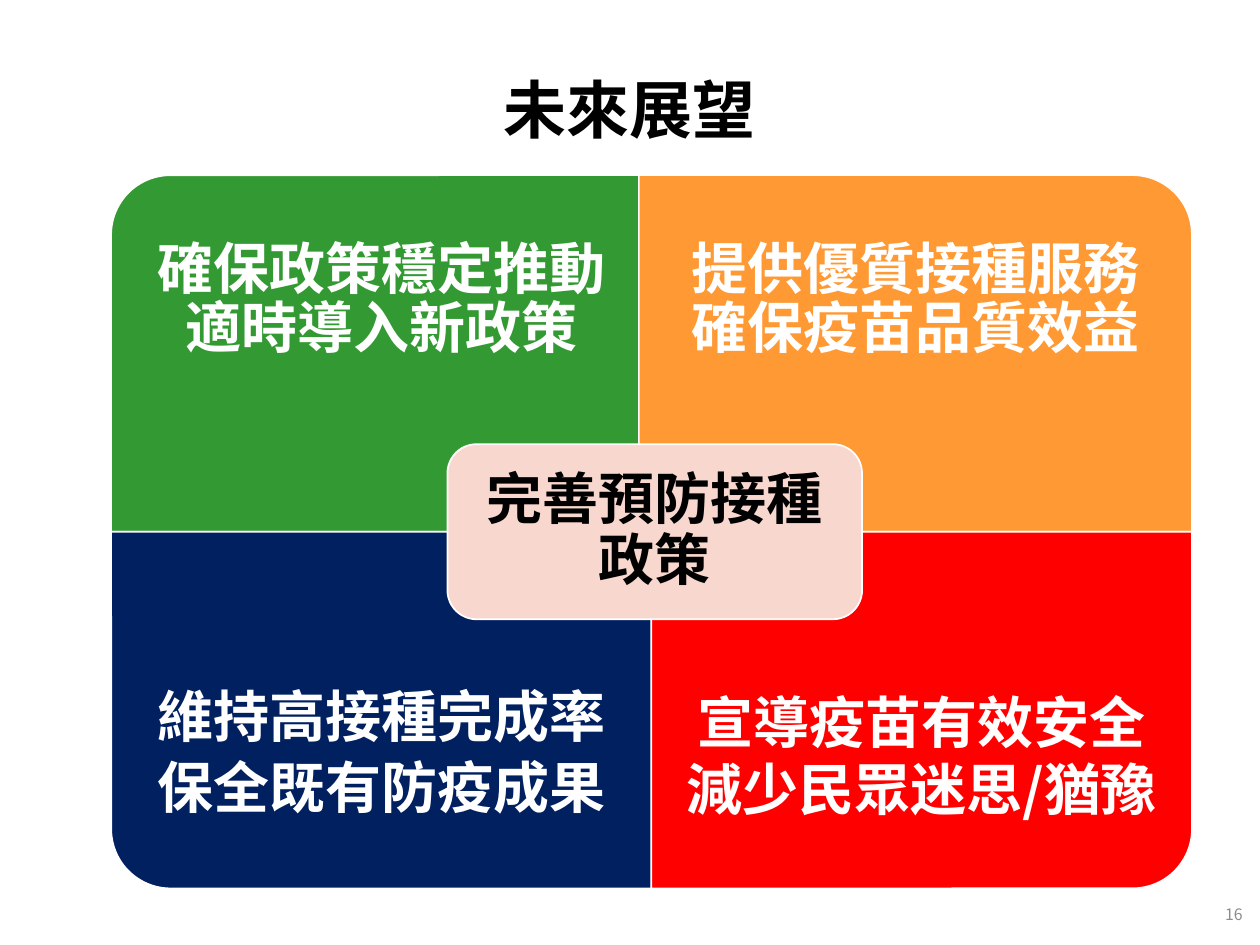
import pptx
import pptx.util
import pptx.dml.color
import pptx.enum.shapes
import pptx.enum.text
import pptx.oxml
import pptx.oxml.ns

Cm, Pt = pptx.util.Cm, pptx.util.Pt
SHAPE = pptx.enum.shapes.MSO_SHAPE
ALIGN = pptx.enum.text.PP_ALIGN

COLORS = {
    "black": "000000", "white": "FFFFFF", "gray": "8C8C8C", "green": "339933",
    "orange": "FF9933", "navy": "002060", "red": "FF0000", "pink": "F8D7CE",
}
FONT, NUMBER_FONT = "Noto Sans CJK SC", "Noto Sans CJK TC"

# Content
TITLE = "未來展望"
PAGE_NUMBER = "16"
CORE_GOAL = "完善預防接種政策"
# Lines, color, column, row, rotation, line spacing, space after (pt)
QUADRANTS = [
    (["確保政策穩定推動", "適時導入新政策"], "green", 0, 0, 270, 0.5, 14),
    (["提供優質接種服務", "確保疫苗品質效益"], "orange", 1, 0, 0, 0.5, 14),
    (["維持高接種完成率", "保全既有防疫成果"], "navy", 0, 1, 180, 0.9, 6),
    (["宣導疫苗有效安全減少民眾迷思/猶豫"], "red", 1, 1, 90, 1, 6),
]

# Matrix geometry in cm
LEFT, TOP, RIGHT = 2.24, 3.53, 24.03
QUAD_W, QUAD_H = 10.9, 7.19
WIDE_W = 11.15  # the orange quadrant reaches over the green one
LABEL_H = QUAD_H * 0.75
CORE_W, CORE_H, CORE_PAD = 8.36, 3.53, 0.17


def rgb(name):
    return pptx.dml.color.RGBColor.from_string(COLORS[name])


def add_text(slide, box, lines, size, color, bold=True, font=FONT,
             align=ALIGN.CENTER, spacing=0.9, after=0, inset=None):
    frame = slide.shapes.add_textbox(*map(Cm, box)).text_frame
    frame.word_wrap = True
    frame.vertical_anchor = pptx.enum.text.MSO_ANCHOR.MIDDLE
    if inset is not None:
        frame.margin_left = frame.margin_right = Cm(inset)
        frame.margin_top = frame.margin_bottom = Cm(inset)
    frame.text = "\n".join(lines)
    for paragraph in frame.paragraphs:
        paragraph.alignment = align
        paragraph.line_spacing = spacing
        paragraph.space_after = Pt(after)
        for run in paragraph.runs:
            run.font.size, run.font.bold, run.font.name = Pt(size), bold, font
            run.font.color.rgb = rgb(color)
            # East Asian typeface
            east_asian = pptx.oxml.parse_xml(
                f'<a:ea {pptx.oxml.ns.nsdecls("a")} typeface="{font}"/>')
            run.font._element.find(pptx.oxml.ns.qn("a:latin")).addnext(east_asian)


def add_panel(slide, preset, box, color, rotation=0):
    left, top, width, height = box
    if rotation % 180:  # a quarter turn swaps the sides about the centre
        left, top = left + (width - height) / 2, top + (height - width) / 2
        width, height = height, width
    panel = slide.shapes.add_shape(preset, *map(Cm, (left, top, width, height)))
    panel.rotation = rotation
    panel.shadow.inherit = False
    panel.fill.solid()
    panel.fill.fore_color.rgb = rgb(color)
    panel.line.color.rgb = rgb("white")
    panel.line.width = Pt(1)


def main():
    deck = pptx.Presentation()
    deck.slide_width, deck.slide_height = Cm(25.4), Cm(19.05)
    slide = deck.slides.add_slide(deck.slide_layouts[6])

    # Title and page number
    add_text(slide, (1.75, 1.02, 21.9, 2.51), [TITLE], 36, "black")
    add_text(slide, (19.58, 17.93, 5.72, 1.02), [PAGE_NUMBER], 9, "gray",
             bold=False, font=NUMBER_FONT, align=ALIGN.RIGHT, spacing=1)

    # Four quadrants, labels towards the outer edge
    for lines, color, column, row, rotation, spacing, after in QUADRANTS:
        width = WIDE_W if color == "orange" else QUAD_W
        left = RIGHT - width if column else LEFT
        top = TOP + row * QUAD_H
        add_panel(slide, SHAPE.ROUND_1_RECTANGLE, (left, top, width, QUAD_H),
                  color, rotation)
        label_top = top + row * (QUAD_H - LABEL_H)
        add_text(slide, (left, label_top, width, LABEL_H), lines, 32, "white",
                 spacing=spacing, after=after, inset=0.63)

    # Core goal in the middle
    core_left, core_top = 9.02, TOP + QUAD_H - CORE_H / 2
    add_panel(slide, SHAPE.ROUNDED_RECTANGLE,
              (core_left, core_top, CORE_W, CORE_H), "pink")
    add_text(slide, (core_left + CORE_PAD, core_top + CORE_PAD,
                     CORE_W - 2 * CORE_PAD, CORE_H - 2 * CORE_PAD),
             [CORE_GOAL], 32, "black", after=11, inset=0.34)

    deck.save("out.pptx")


if __name__ == "__main__":
    main()
